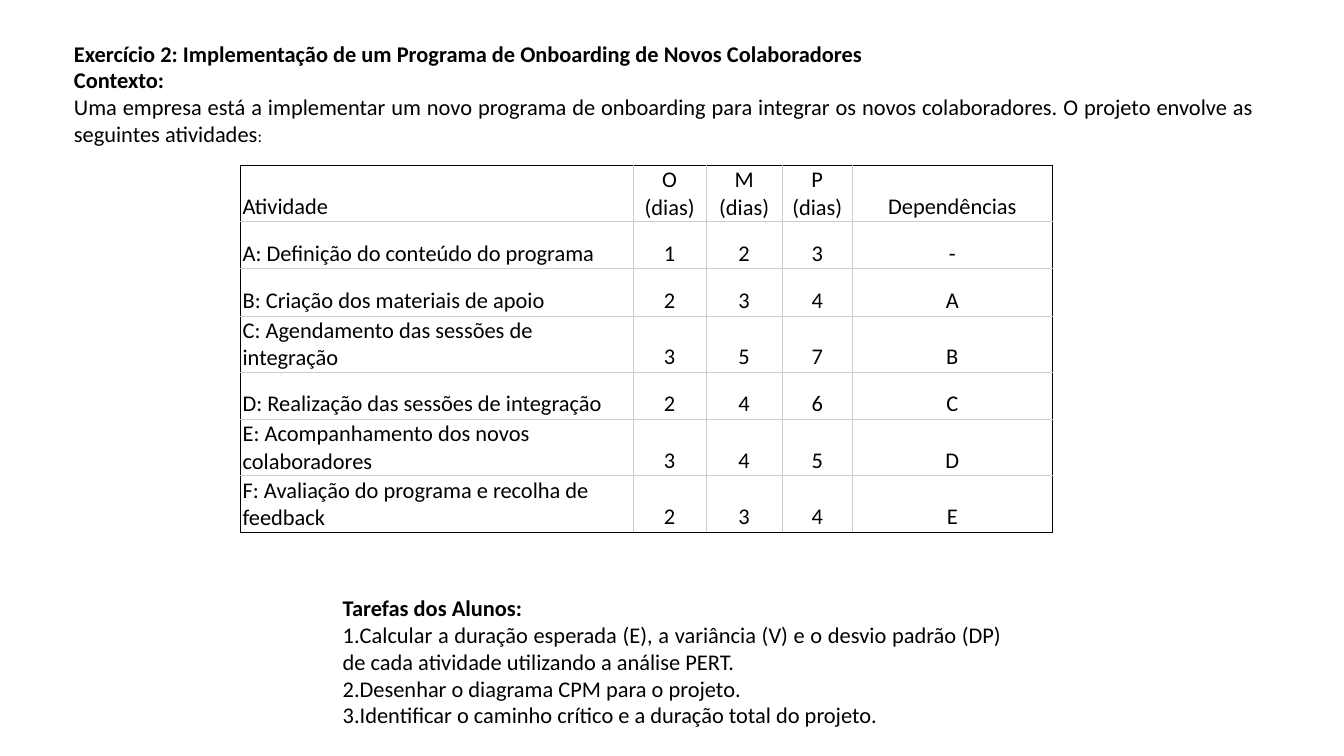
from dataclasses import dataclass

from lxml.etree import SubElement
from pptx import Presentation
from pptx.dml.color import RGBColor
from pptx.enum.text import MSO_ANCHOR, MSO_AUTO_SIZE, PP_ALIGN
from pptx.oxml import parse_xml
from pptx.oxml.ns import nsdecls, qn
from pptx.util import Cm, Pt


@dataclass(frozen=True)
class Theme:
    font: str = "Calibri"
    ink: str = "000000"
    grid: str = "CCCCCC"
    paper: str = "FFFFFF"
    size: float = 24
    small: float = 18
    line: float = 0.75


THEME = Theme()

INTRO = [
    ("Exercício 2: Implementação de um Programa de Onboarding de Novos Colaboradores", True),
    ("Contexto:", True),
    ("Uma empresa está a implementar um novo programa de onboarding para integrar "
     "os novos colaboradores. O projeto envolve as seguintes atividades", False),
]
ROWS = [
    ("Atividade", "O (dias)", "M (dias)", "P (dias)", "Dependências"),
    ("A: Definição do conteúdo do programa", "1", "2", "3", "-"),
    ("B: Criação dos materiais de apoio", "2", "3", "4", "A"),
    ("C: Agendamento das sessões de integração", "3", "5", "7", "B"),
    ("D: Realização das sessões de integração", "2", "4", "6", "C"),
    ("E: Acompanhamento dos novos colaboradores", "3", "4", "5", "D"),
    ("F: Avaliação do programa e recolha de feedback", "2", "3", "4", "E"),
]
SHARES = (5.85, 1.08, 1.14, 1.04, 2.98)
TASKS = [
    "Calcular a duração esperada (E), a variância (V) e o desvio padrão (DP) "
    "de cada atividade utilizando a análise PERT.",
    "Desenhar o diagrama CPM para o projeto.",
    "Identificar o caminho crítico e a duração total do projeto.",
]


def write(par, text, size=THEME.size, bold=False, align=PP_ALIGN.JUSTIFY):
    par.alignment = align
    par.space_before = par.space_after = Pt(0)
    run = par.add_run()
    run.text = text
    run.font.name = THEME.font
    run.font.size = Pt(size)
    run.font.bold = bold
    run.font.color.rgb = RGBColor.from_string(THEME.ink)


def place(shape, box):
    shape.left, shape.top, shape.width, shape.height = map(Cm, box)
    frame = shape.text_frame
    frame.word_wrap = True
    frame.auto_size = MSO_AUTO_SIZE.SHAPE_TO_FIT_TEXT
    frame.vertical_anchor = MSO_ANCHOR.TOP
    return frame


def add_par(frame, first):
    return frame.paragraphs[0] if first else frame.add_paragraph()


def mark(par, count):
    props = par._p.get_or_add_pPr()
    props.set("marL", "0")
    props.set("indent", "0")
    if count:
        SubElement(props, qn("a:buFont"), typeface="+mj-lt")
        SubElement(props, qn("a:buAutoNum"), type="arabicPeriod")
    else:
        SubElement(props, qn("a:buNone"))


def edge(cell, hues):
    props = cell._tc.get_or_add_tcPr()
    for spot, (side, hue) in enumerate(zip("LRTB", hues)):
        props.insert(spot, parse_xml(
            f'<a:ln{side} {nsdecls("a")} w="{Pt(THEME.line)}"><a:solidFill>'
            f'<a:srgbClr val="{hue}"/></a:solidFill></a:ln{side}>'))


def add_intro(slide, box):
    frame = place(slide.shapes.title, box)
    for spot, (text, bold) in enumerate(INTRO):
        par = add_par(frame, spot == 0)
        write(par, text, bold=bold)
    write(par, ":", size=THEME.small)


def add_grid(slide, box):
    table = slide.shapes.add_table(len(ROWS), len(SHARES), *map(Cm, box)).table
    table.first_row = table.horz_banding = False
    wide, high = box[2:]
    for col, share in zip(table.columns, SHARES):
        col.width = Cm(round(wide * share / sum(SHARES), 2))
    for r, row in enumerate(ROWS):
        table.rows[r].height = Cm(high / len(ROWS))
        for c, text in enumerate(row):
            cell = table.cell(r, c)
            cell.vertical_anchor = MSO_ANCHOR.BOTTOM
            cell.margin_left = cell.margin_right = Cm(0.08)
            cell.margin_top = cell.margin_bottom = Cm(0.05)
            cell.fill.solid()
            cell.fill.fore_color.rgb = RGBColor.from_string(THEME.paper)
            rims = (c == 0, c == len(row) - 1, r == 0, r == len(ROWS) - 1)
            edge(cell, [THEME.ink if rim else THEME.grid for rim in rims])
            write(cell.text_frame.paragraphs[0], text,
                  align=PP_ALIGN.CENTER if c else PP_ALIGN.LEFT)


def add_tasks(slide, box):
    frame = place(slide.placeholders[1], box)
    for spot, text in enumerate(["Tarefas dos Alunos:", *TASKS]):
        par = add_par(frame, spot == 0)
        write(par, text, bold=spot == 0)
        mark(par, count=spot > 0)


def main():
    deck = Presentation()
    deck.slide_width, deck.slide_height = Cm(50.8), Cm(28.58)
    slide = deck.slides.add_slide(deck.slide_layouts[1])
    add_intro(slide, (2.54, 1.37, 45.08, 4.37))
    add_grid(slide, (9.09, 6.25, 30.7, 12.45))
    add_tasks(slide, (12.7, 22.33, 25.4, 5.38))
    deck.save("out.pptx")


if __name__ == "__main__":
    main()
